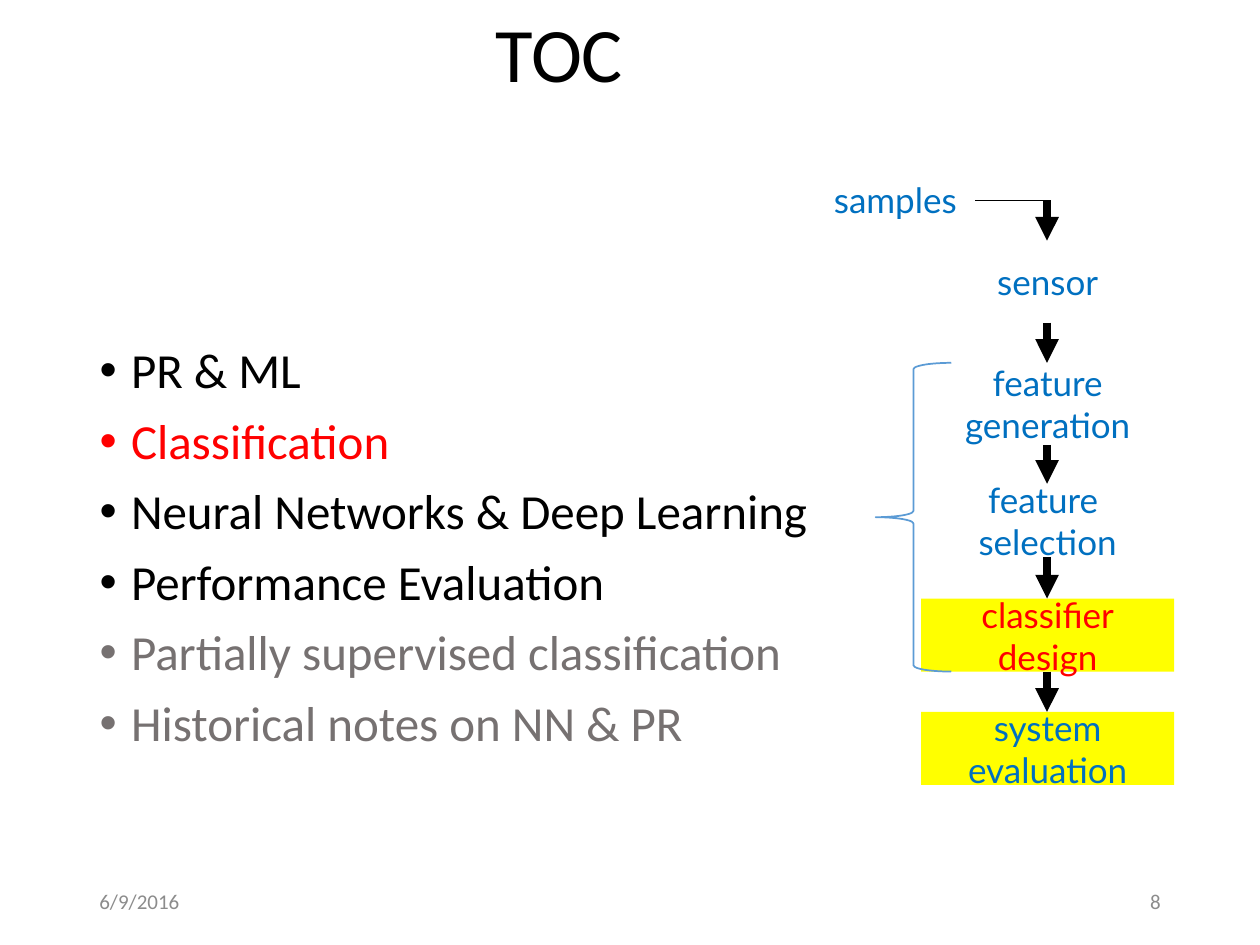
from lxml.etree import SubElement
from pptx import Presentation
from pptx.dml.color import RGBColor
from pptx.enum.shapes import MSO_CONNECTOR as Connector, MSO_SHAPE as Shape
from pptx.enum.text import MSO_ANCHOR as Anchor, MSO_AUTO_SIZE as AutoSize, PP_ALIGN as Align
from pptx.oxml.ns import qn
from pptx.util import Inches, Pt

BLACK = RGBColor(0x00, 0x00, 0x00)
WHITE = RGBColor(0xFF, 0xFF, 0xFF)
RED = RGBColor(0xFF, 0x00, 0x00)
BLUE = RGBColor(0x00, 0x70, 0xC0)
YELLOW = RGBColor(0xFF, 0xFF, 0x00)
GREY = RGBColor(0x76, 0x71, 0x71)
FOOTER_GREY = RGBColor(0x8C, 0x8C, 0x8C)
BRACE_BLUE = RGBColor(0x5B, 0x9B, 0xD5)

TOPICS = [
    ("PR & ML", BLACK),
    ("Classification", RED),
    ("Neural Networks & Deep Learning", BLACK),
    ("Performance Evaluation", BLACK),
    ("Partially supervised classification", GREY),
    ("Historical notes on NN & PR", GREY),
]
STAGES = [
    ("sensor", 1.91, 0.65, WHITE, BLUE),
    ("feature\ngeneration", 2.88, 0.65, WHITE, BLUE),
    ("feature \nselection", 3.84, 0.58, None, BLUE),
    ("classifier\ndesign", 4.75, 0.58, YELLOW, RED),
    ("system\nevaluation", 5.65, 0.58, YELLOW, BLUE),
]
STAGE_LEFT, STAGE_WIDTH = 7.31, 2.01
FLOW_X = 8.31
SAMPLES_Y = 1.59


class TocSlide:
    """Holds the fonts and the current page, and draws each kind of element."""

    body_font = "Calibri"
    diagram_font = "Lato"

    def __init__(self, page):
        self.page = page

    def place(self, item, left, top, width, height):
        item.left, item.top = Inches(left), Inches(top)
        item.width, item.height = Inches(width), Inches(height)

    def format(self, para, font, size, color, align=Align.LEFT):
        para.alignment = align
        for span in para.runs:
            span.font.name = font
            span.font.size = Pt(size)
            span.font.color.rgb = color

    def title(self, text, *area):
        title = self.page.shapes.title
        self.place(title, *area)
        frame = title.text_frame
        frame.text = text
        frame.vertical_anchor = Anchor.MIDDLE
        frame.auto_size = AutoSize.NONE
        para = frame.paragraphs[0]
        para.line_spacing = 0.9
        self.format(para, self.body_font, 44, BLACK, Align.CENTER)

    def topics(self, items, *area):
        body = self.page.placeholders[1]
        self.place(body, *area)
        frame = body.text_frame
        frame.text = "\n".join(text for text, _ in items)
        frame.auto_size = AutoSize.NONE
        for para, (_, color) in zip(frame.paragraphs, items):
            para.line_spacing = 0.9
            para.space_before = Pt(10)
            self.format(para, self.body_font, 28, color)
            properties = para._p.get_or_add_pPr()
            properties.set("marL", str(Inches(0.25)))
            properties.set("indent", str(-Inches(0.25)))
            SubElement(properties, qn("a:buFont")).set("typeface", "Arial")
            SubElement(properties, qn("a:buChar")).set("char", "•")

    def label(self, text, area, font, size, color, align=Align.LEFT, anchor=Anchor.MIDDLE, wrap=True):
        box = self.page.shapes.add_textbox(*map(Inches, area))
        self.fill_text(box, text, font, size, color, align, anchor, wrap)

    def fill_text(self, box, text, font, size, color, align, anchor, wrap):
        frame = box.text_frame
        frame.text = text
        frame.word_wrap = wrap
        frame.vertical_anchor = anchor
        for para in frame.paragraphs:
            self.format(para, font, size, color, align)

    def stage(self, text, top, height, fill, color):
        area = (STAGE_LEFT, top, STAGE_WIDTH, height)
        style = (self.diagram_font, 20, color, Align.CENTER, Anchor.MIDDLE, False)
        if fill is None:
            self.label(text, area, *style)
            return
        box = self.page.shapes.add_shape(Shape.RECTANGLE, *map(Inches, area))
        box.shadow.inherit = False
        box.fill.solid()
        box.fill.fore_color.rgb = fill
        box.line.fill.background()
        self.fill_text(box, text, *style)

    def line(self, start, end, width, arrow=False):
        line = self.page.shapes.add_connector(Connector.STRAIGHT, *map(Inches, start + end))
        line.line.color.rgb = BLACK
        line.line.width = Pt(width)
        if arrow:
            SubElement(line.line._get_or_add_ln(), qn("a:tailEnd")).set("type", "triangle")
        SubElement(line._element.spPr, qn("a:effectLst"))

    def brace(self, *area):
        brace = self.page.shapes.add_shape(Shape.LEFT_BRACE, *map(Inches, area))
        brace.shadow.inherit = False
        brace.fill.background()
        brace.line.color.rgb = BRACE_BLUE
        brace.line.width = Pt(1)


def main():
    deck = Presentation()
    deck.slide_width, deck.slide_height = Inches(10), Inches(7.5)
    toc = TocSlide(deck.slides.add_slide(deck.slide_layouts[1]))

    toc.title("TOC", 3.26, 0.06, 2.36, 0.79)
    toc.topics(TOPICS, 0.69, 2.7, 7.77, 3.73)
    toc.label("6/9/2016", (0.69, 6.95, 2.25, 0.4), toc.body_font, 12, FOOTER_GREY)
    toc.label("8", (7.06, 6.95, 2.25, 0.4), toc.body_font, 12, FOOTER_GREY, Align.RIGHT)

    for stage in STAGES:
        toc.stage(*stage)
    toc.label("samples", (6.52, 1.37, 1.2, 0.44), toc.diagram_font, 20, BLUE,
              anchor=Anchor.TOP, wrap=False)

    toc.line((7.74, SAMPLES_Y), (FLOW_X, SAMPLES_Y), 0.75)
    bottom = SAMPLES_Y
    for _, top, height, _, _ in STAGES:
        toc.line((FLOW_X, bottom), (FLOW_X, top), 4.5, arrow=True)
        bottom = top + height
    toc.brace(6.95, 2.88, 0.6, 2.45)

    deck.save("out.pptx")


if __name__ == "__main__":
    main()
